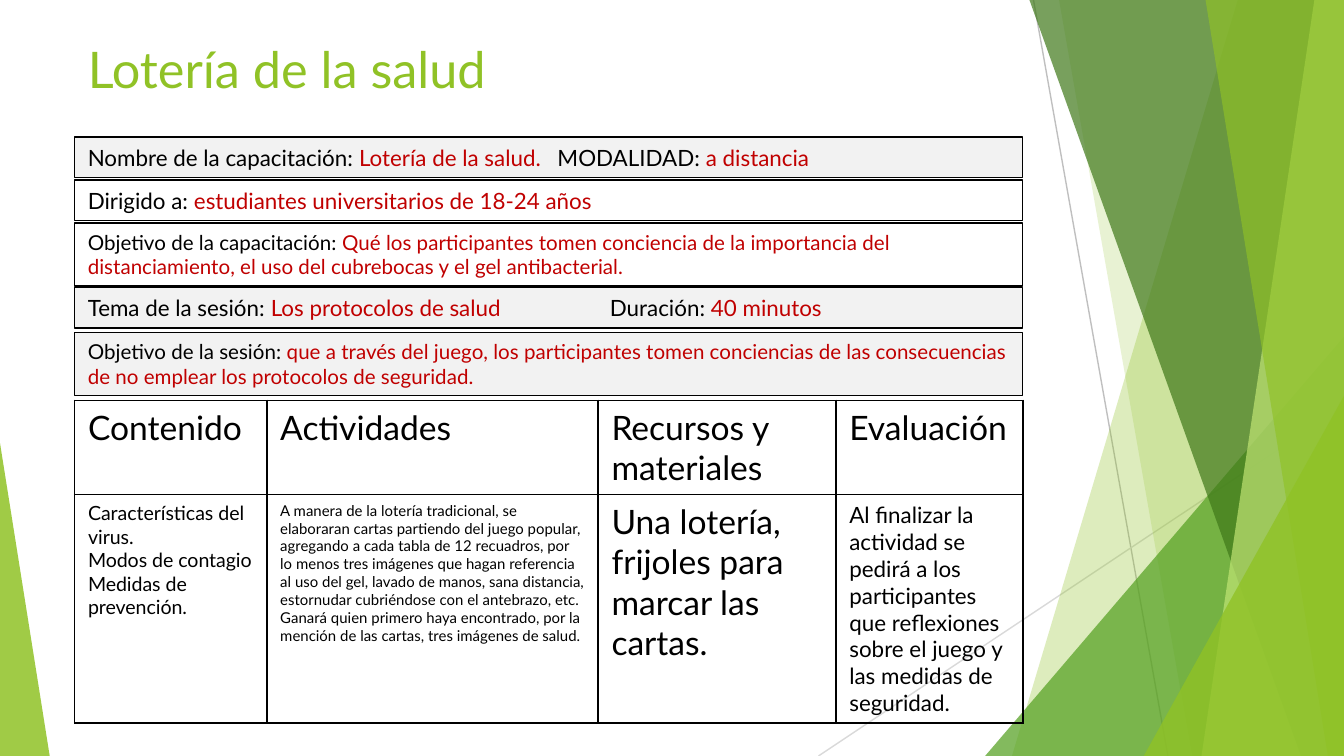
from lxml.etree import SubElement
from pptx import Presentation
from pptx.dml.color import RGBColor
from pptx.enum.shapes import MSO_CONNECTOR as Connector, MSO_SHAPE as Shape
from pptx.enum.text import MSO_ANCHOR as Anchor, PP_ALIGN as Align
from pptx.oxml.ns import qn
from pptx.util import Pt

EMU_PER_PX = 4572
WIDTH, HEIGHT = 2000, 1125
GREEN, BLACK, RED, GRAY = "90C226", "000000", "C00000", "F2F2F2"


def px(length):
    return length * EMU_PER_PX


def color(hex_code):
    return RGBColor.from_string(hex_code)


def paint(shape, fill=None, opacity=100, line=None):
    shape.shadow.inherit = False
    if fill:
        shape.fill.solid()
        shape.fill.fore_color.rgb = color(fill)
        if opacity < 100:
            tint = shape.fill._xPr.find(qn("a:solidFill"))[0]
            SubElement(tint, qn("a:alpha"), val=str(opacity * 1000))
    else:
        shape.fill.background()
    if line:
        shape.line.color.rgb = color(line)
        shape.line.width = Pt(0.75)
    else:
        shape.line.fill.background()


def write(frame, paragraphs, size, tab=None, anchor=Anchor.TOP):
    frame.word_wrap = True
    frame.vertical_anchor = anchor
    for index, runs in enumerate(paragraphs):
        paragraph = frame.add_paragraph() if index else frame.paragraphs[0]
        paragraph.alignment = Align.LEFT
        if tab:
            stops = SubElement(paragraph._p.get_or_add_pPr(), qn("a:tabLst"))
            SubElement(stops, qn("a:tab"), pos=str(px(tab)), algn="l")
        for words, hue in runs:
            run = paragraph.add_run()
            run.text = words
            run.font.name = "Lato"
            run.font.size = Pt(size)
            run.font.color.rgb = color(hue)


def draw_ray(shapes, start, end, hue):
    ray = shapes.add_connector(Connector.STRAIGHT, *map(px, start + end))
    ray.line.color.rgb = color(hue)
    ray.line.width = Pt(0.75)
    SubElement(ray._element.spPr, qn("a:effectLst"))


def draw_facets(shapes, left, top, width, height):
    right, bottom = left + width, top + height

    def panel(upper, lower, fill, opacity):
        outline = shapes.build_freeform(px(left + upper), px(top), 1)
        corners = [(right, top), (right, bottom), (left + lower, bottom)]
        outline.add_line_segments([(px(x), px(y)) for x, y in corners])
        paint(outline.convert_to_shape(), fill, opacity)

    def wedge(x, wide, high, peak, fill, opacity):
        box = (left + x, bottom - high, wide, high)
        triangle = shapes.add_shape(Shape.ISOSCELES_TRIANGLE, *map(px, box))
        triangle.adjustments[0] = peak
        paint(triangle, fill, opacity)

    draw_ray(shapes, (left + 1538, top), (left + 1738, bottom), "BFBFBF")
    draw_ray(shapes, (right, top + 604), (left + 1218, bottom), "D9D9D9")
    panel(1842, 1506, GREEN, 30)
    panel(1576, 1774, GREEN, 20)
    wedge(1466, 534, 624, 1, "54A021", 72)
    panel(1532, 1936, "3F7819", 70)
    panel(1956, 1788, "C0E474", 70)
    panel(1794, 1976, GREEN, 65)
    wedge(1702, 298, 536, 1, GREEN, 80)
    wedge(0, 74, 466, 0, GREEN, 85)


def draw_title(shapes, *box):
    title = shapes.add_textbox(*map(px, box))
    write(title.text_frame, [[("Lotería de la salud", GREEN)]], 27, anchor=Anchor.MIDDLE)


def draw_details(shapes, left, top, width):
    details = [
        (0, 60, GRAY, 12, 699, ["Nombre de la capacitación: ", "Lotería de la salud.\t",
                                "MODALIDAD:", " a distancia"]),
        (64, 60, None, 12, None, ["Dirigido a: ", "estudiantes universitarios de 18-24 años"]),
        (128, 94, None, 11, None, [
            "Objetivo de la capacitación: ",
            "Qué los participantes tomen conciencia de la importancia del "
            "distanciamiento, el uso del cubrebocas y el gel antibacterial."]),
        (224, 60, GRAY, 12, 777, ["Tema de la sesión: ", "Los protocolos de salud\t",
                                  "Duración:", " 40 minutos"]),
        (291, 94, GRAY, 11, None, [
            "Objetivo de la sesión: ",
            "que a través del juego, los participantes tomen conciencias de las "
            "consecuencias de no emplear los protocolos de seguridad."]),
    ]
    for offset, height, fill, size, tab, pieces in details:
        box = (left, top + offset, width, height)
        detail = shapes.add_shape(Shape.RECTANGLE, *map(px, box))
        paint(detail, fill, line=BLACK)
        runs = [(words, (BLACK, RED)[i % 2]) for i, words in enumerate(pieces)]
        write(detail.text_frame, [runs], size, tab)


def frame_cell(cell):
    properties = cell._tc.get_or_add_tcPr()
    for edge in ("a:lnL", "a:lnR", "a:lnT", "a:lnB"):
        border = SubElement(properties, qn(edge), w=str(Pt(1)))
        SubElement(SubElement(border, qn("a:solidFill")), qn("a:srgbClr"), val=BLACK)
    cell.fill.background()


def draw_plan(shapes, left, top, width, height):
    plan = [
        [(18, ["Contenido"]), (18, ["Actividades"]),
         (18, ["Recursos y materiales"]), (18, ["Evaluación"])],
        [(10.5, ["Características del virus.", "Modos de contagio", "Medidas de prevención."]),
         (8, ["A manera de la lotería tradicional, se elaboraran cartas partiendo del juego "
              "popular, agregando a cada tabla de 12 recuadros, por lo menos tres imágenes que "
              "hagan referencia al uso del gel, lavado de manos, sana distancia, estornudar "
              "cubriéndose con el antebrazo, etc.",
              "Ganará quien primero haya encontrado, por la mención de las cartas, tres "
              "imágenes de salud."]),
         (18, ["Una lotería, frijoles para marcar las cartas."]),
         (12, ["Al finalizar la actividad se pedirá a los participantes que reflexiones sobre "
               "el juego y las medidas de seguridad."])],
    ]
    box = (left, top, width, height)
    table = shapes.add_table(2, 4, *map(px, box)).table
    table.first_row = table.horz_banding = False
    for column, wide in zip(table.columns, (286, 493, 354, width - 1133)):
        column.width = px(wide)
    for row, high in zip(table.rows, (140, height - 140)):
        row.height = px(high)
    for row, contents in zip(table.rows, plan):
        for cell, (size, paragraphs) in zip(row.cells, contents):
            frame_cell(cell)
            write(cell.text_frame, [[(words, BLACK)] for words in paragraphs], size)


def main():
    deck = Presentation()
    deck.slide_width, deck.slide_height = px(WIDTH), px(HEIGHT)
    shapes = deck.slides.add_slide(deck.slide_layouts[6]).shapes
    draw_facets(shapes, 0, 0, WIDTH, HEIGHT)
    draw_title(shapes, 111, 44, 1411, 116)
    draw_details(shapes, 111, 204, 1411)
    draw_plan(shapes, 111, 596, 1411, 480)
    deck.save("out.pptx")


if __name__ == "__main__":
    main()
